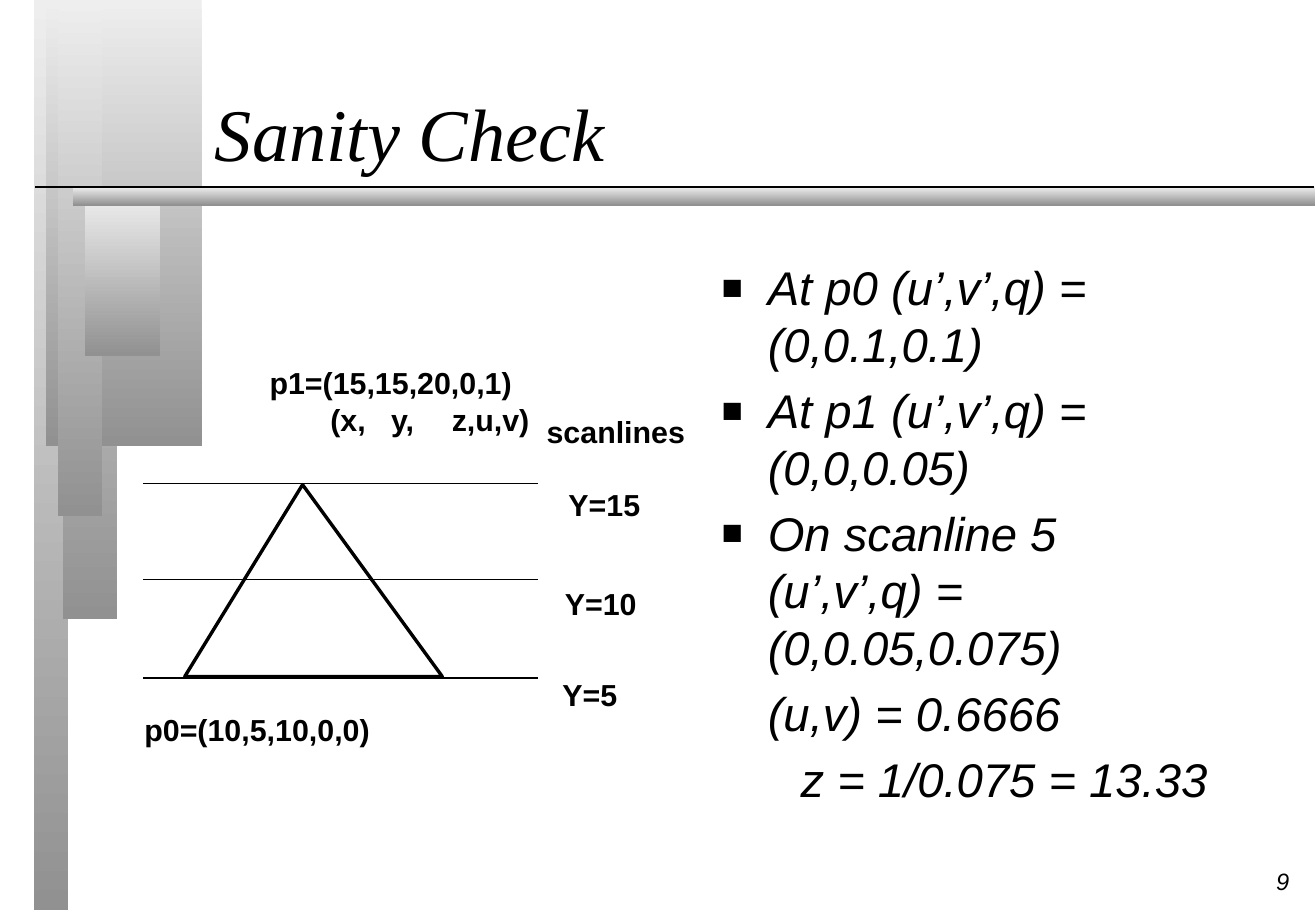
from dataclasses import dataclass, field
from typing import Any

from lxml import etree
from pptx import Presentation
from pptx.dml import color
from pptx.enum import shapes, text
from pptx.oxml import ns
from pptx import util as u


@dataclass(frozen=True)
class Theme:
    ink: color.RGBColor = color.RGBColor(0, 0, 0)
    gradient: tuple[str, str] = ("EEEEEE", "919191")
    heading_font: str = "Times New Roman"
    body_font: str = "Arial"
    title: int = 44
    body: int = 28
    label: int = 18
    number: int = 14
    thin: float = 1
    thick: float = 2


THEME = Theme()
LABEL = {"name": THEME.body_font, "size": u.Pt(THEME.label), "bold": True}
BODY = {"name": THEME.body_font, "size": u.Pt(THEME.body), "italic": True}
NUMBER = {"name": THEME.body_font, "size": u.Pt(THEME.number), "italic": True}
TITLE = {"name": THEME.heading_font, "size": u.Pt(THEME.title), "italic": True}


@dataclass(frozen=True)
class Box:
    left: float
    top: float
    width: float
    height: float

    def lengths(self) -> list[int]:
        return [u.Inches(v) for v in (self.left, self.top, self.width, self.height)]


@dataclass(frozen=True)
class Line:
    content: str
    margin: float = 0
    bullet: bool = False
    tabs: tuple[float, ...] = ()
    paragraph_format: dict[str, Any] = field(default_factory=dict)


@dataclass(frozen=True)
class TextBlock:
    box: Box
    lines: tuple[Line, ...]
    font: dict[str, Any]
    frame: dict[str, Any] = field(default_factory=lambda: {"word_wrap": False})


def apply(target: Any, values: dict[str, Any]) -> None:
    for name, value in values.items():
        setattr(target, name, value)


def add_child(parent: Any, tag: str, **attributes: str) -> Any:
    return etree.SubElement(parent, ns.qn(tag), attributes)


def draw_bar(slide: Any, box: Box) -> None:
    shape = slide.shapes.add_shape(shapes.MSO_SHAPE.RECTANGLE, *box.lengths())
    shape.shadow.inherit = False
    shape.line.fill.background()
    shape.fill.gradient()
    shape.fill.gradient_angle = 270
    for stop, shade in zip(shape.fill.gradient_stops, THEME.gradient):
        stop.color.rgb = color.RGBColor.from_string(shade)


def draw_rule(slide: Any, left: float, right: float, y: float) -> None:
    ends = [u.Inches(v) for v in (left, y, right, y)]
    rule = slide.shapes.add_connector(shapes.MSO_CONNECTOR.STRAIGHT, *ends)
    rule.line.color.rgb = THEME.ink
    rule.line.width = u.Pt(THEME.thin)
    add_child(rule._element.spPr, "a:effectLst")


def draw_triangle(slide: Any, corners: list[tuple[float, float]]) -> None:
    points = [(u.Inches(x), u.Inches(y)) for x, y in corners]
    builder = slide.shapes.build_freeform(*points[0])
    builder.add_line_segments(points[1:], close=True)
    triangle = builder.convert_to_shape()
    triangle.shadow.inherit = False
    triangle.fill.background()
    triangle.line.color.rgb = THEME.ink
    triangle.line.width = u.Pt(THEME.thick)


def format_indents(paragraph: Any, line: Line) -> None:
    properties = paragraph._p.get_or_add_pPr()
    margin = u.Inches(line.margin)
    properties.set("marL", str(margin))
    properties.set("indent", str(-margin if line.bullet else 0))
    if line.bullet:
        bullet_color = add_child(properties, "a:buClr")
        add_child(bullet_color, "a:srgbClr", val=str(THEME.ink))
        add_child(properties, "a:buSzPct", val="75000")
        add_child(properties, "a:buFont", typeface=THEME.body_font)
        add_child(properties, "a:buChar", char="■")
    if line.tabs:
        tab_list = add_child(properties, "a:tabLst")
        for position in line.tabs:
            add_child(tab_list, "a:tab", pos=str(u.Inches(position)), algn="l")


def draw_text(slide: Any, block: TextBlock) -> None:
    frame = slide.shapes.add_textbox(*block.box.lengths()).text_frame
    apply(frame, block.frame)
    for index, line in enumerate(block.lines):
        paragraph = frame.add_paragraph() if index else frame.paragraphs[0]
        apply(paragraph, line.paragraph_format)
        format_indents(paragraph, line)
        run = paragraph.add_run()
        run.text = line.content
        apply(run.font, block.font)
        run.font.color.rgb = THEME.ink


# Decorative bars, back to front
BARS = (
    Box(0.28, 0, 0.28, 7.49),
    Box(0.52, 0, 0.44, 5.1),
    Box(0.38, 0, 1.28, 3.67),
    Box(0.48, 0, 0.36, 4.25),
    Box(0.7, 1.6, 0.62, 1.33),
    Box(0.6, 1.54, 10.22, 0.15),
)

# Triangle, scanlines and their labels
TRIANGLE = [(2.49, 3.99), (1.52, 5.57), (3.64, 5.57)]
SCANLINES = (3.98, 4.77, 5.58)
LABELS = (
    ("p0=(10,5,10,0,0)", Box(1.09, 5.81, 2.06, 0.4)),
    ("scanlines", Box(4.4, 3.35, 1.34, 0.4)),
    ("Y=15", Box(4.58, 3.95, 0.79, 0.4)),
    ("Y=10", Box(4.55, 4.77, 0.79, 0.4)),
    ("Y=5", Box(4.53, 5.52, 0.65, 0.4)),
)

# Worked values on the right
SPACED = {"space_before": u.Pt(5.6)}
VALUES = (
    Line("At p0 (u’,v’,q) = (0,0.1,0.1)", 0.38, True, (), SPACED),
    Line("At p1 (u’,v’,q) = (0,0,0.05)", 0.38, True, (), SPACED),
    Line("On scanline 5 (u’,v’,q) = (0,0.05,0.075)", 0.38, True, (), SPACED),
    Line("(u,v) = 0.6666", 0.38, paragraph_format=SPACED),
    Line("z = 1/0.075 = 13.33", 0.65, paragraph_format=SPACED),
)

TEXTS = (
    TextBlock(Box(1.67, 0.25, 8.42, 1.25), (Line("Sanity Check"),), TITLE,
              {"word_wrap": True, "vertical_anchor": text.MSO_ANCHOR.BOTTOM}),
    *(TextBlock(box, (Line(label),), LABEL) for label, box in LABELS),
    TextBlock(Box(2.12, 2.95, 2.4, 0.7),
              (Line("p1=(15,15,20,0,1)"),
               Line("\t(x,\ty,\tz,u,v)", tabs=(0.49, 0.99, 1.32))),
              LABEL, {"word_wrap": True}),
    TextBlock(Box(5.84, 2.08, 4.32, 4.58), VALUES, BODY, {"word_wrap": True}),
    TextBlock(Box(10.28, 7.09, 0.43, 0.33),
              (Line("9", paragraph_format={"alignment": text.PP_ALIGN.RIGHT}),),
              NUMBER,
              {"word_wrap": False, "vertical_anchor": text.MSO_ANCHOR.MIDDLE}),
)


def main() -> None:
    presentation = Presentation()
    apply(presentation, {"slide_width": u.Inches(10.83), "slide_height": u.Inches(7.5)})
    slide = presentation.slides.add_slide(presentation.slide_layouts[6])
    for bar in BARS:
        draw_bar(slide, bar)
    draw_rule(slide, 0.29, 10.81, 1.54)
    draw_triangle(slide, TRIANGLE)
    for y in SCANLINES:
        draw_rule(slide, 1.18, 4.43, y)
    for block in TEXTS:
        draw_text(slide, block)
    presentation.save("out.pptx")


if __name__ == "__main__":
    main()
